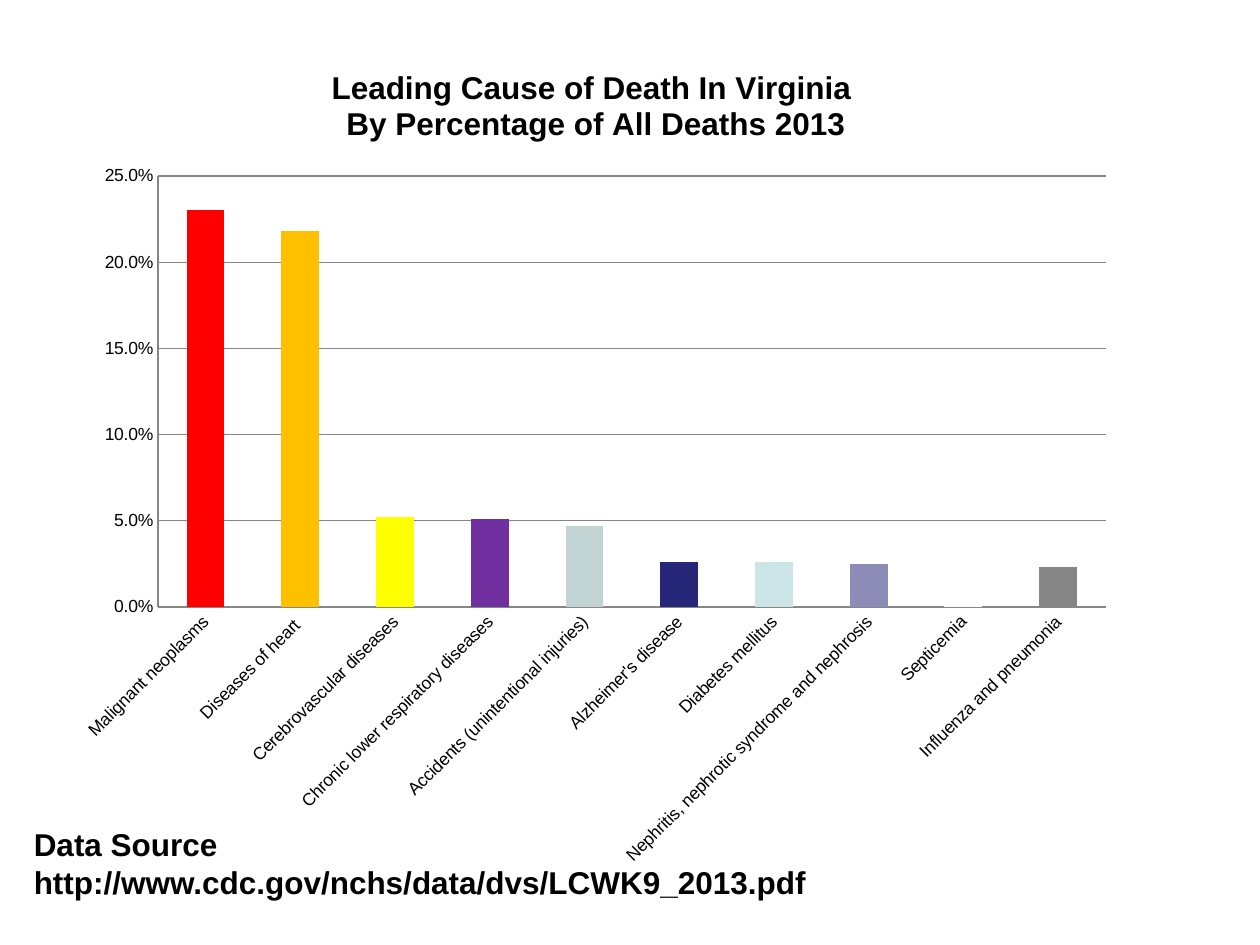
from lxml import etree
from pptx import Presentation, util as u
from pptx.chart.data import CategoryChartData
from pptx.dml.color import RGBColor
from pptx.enum import chart as charts, text
from pptx.oxml.ns import qn

WIDTH, HEIGHT = u.Inches(10), u.Inches(7.5)
FONT = "Arial"
COLOURS = {
    "text": "000000", "line": "868686",
    "red": "FF0000", "orange": "FFC000", "yellow": "FFFF00",
    "purple": "7030A0", "mist": "C2D3D3", "navy": "27277A",
    "ice": "CCE6E7", "lavender": "8C8CB7", "white": "FFFFFF",
    "grey": "868686",
}
TITLE = ["Leading Cause of Death In Virginia ", "By Percentage of All Deaths 2013"]
CAUSES = [
    ("Malignant neoplasms", 0.23, "red"),
    ("Diseases of heart ", 0.218, "orange"),
    ("Cerebrovascular diseases", 0.052, "yellow"),
    ("Chronic lower respiratory diseases", 0.051, "purple"),
    ("Accidents (unintentional injuries)", 0.047, "mist"),
    ("Alzheimer's disease", 0.026, "navy"),
    ("Diabetes mellitus", 0.026, "ice"),
    ("Nephritis, nephrotic syndrome and nephrosis", 0.025, "lavender"),
    ("Septicemia", 0.024, "white"),
    ("Influenza and pneumonia", 0.023, "grey"),
]
SOURCE = "Data Source http://www.cdc.gov/nchs/data/dvs/LCWK9_2013.pdf"


def colour(name):
    return RGBColor.from_string(COLOURS[name])


def style_font(font, size, bold=False):
    font.name, font.size, font.bold = FONT, u.Pt(size), bold
    font.color.rgb = colour("text")


def share_box(left, top, width, height):
    """Turn percentages of the slide into lengths."""
    return [round(share * side / 100) for share, side in
            zip((left, top, width, height), (WIDTH, HEIGHT) * 2)]


def place_by_hand(element, before, modes, **shares):
    """Give a chart part a manual layout in percentages of the chart."""
    for old in element.findall(qn("c:layout")):
        element.remove(old)
    layout = etree.Element(qn("c:layout"))
    manual = etree.SubElement(layout, qn("c:manualLayout"))
    settings = modes | {tag: share / 100 for tag, share in shares.items()}
    for tag, value in settings.items():
        etree.SubElement(manual, qn(f"c:{tag}")).set("val", str(value))
    element.find(qn(f"c:{before}")).addprevious(layout)


def add_title(chart):
    frame = chart.chart_title.text_frame
    for index, line in enumerate(TITLE):
        para = frame.add_paragraph() if index else frame.paragraphs[0]
        para.alignment = text.PP_ALIGN.CENTER
        span = para.add_run()
        span.text = line
        style_font(span.font, 18, True)
    chart.chart_title.include_in_layout = False


def style_axes(chart):
    for axis in (chart.category_axis, chart.value_axis):
        axis.major_tick_mark = axis.minor_tick_mark = charts.XL_TICK_MARK.NONE
        axis.format.line.color.rgb = colour("line")
        axis.format.line.width = u.Pt(0.75)
        style_font(axis.tick_labels.font, 10)
    labels = chart.category_axis._element.find(qn("c:txPr"))
    labels.find(qn("a:bodyPr")).set("rot", str(-45 * 60000))
    values = chart.value_axis
    values.minimum_scale, values.maximum_scale, values.major_unit = 0, 0.25, 0.05
    values.tick_labels.number_format = "0.0%"
    values.tick_labels.number_format_is_linked = False
    values.has_major_gridlines = True
    values.major_gridlines.format.line.color.rgb = colour("line")
    values.major_gridlines.format.line.width = u.Pt(0.75)


def add_cause_chart(page, box):
    data = CategoryChartData(number_format="0.0%")
    data.categories = [cause for cause, _, _ in CAUSES]
    data.add_series("Series 1", [share for _, share, _ in CAUSES])
    chart = page.shapes.add_chart(
        charts.XL_CHART_TYPE.COLUMN_CLUSTERED, *box, data).chart
    style_font(chart.font, 10)
    chart.has_legend = False
    add_title(chart)
    style_axes(chart)

    plot = chart.plots[0]
    plot.gap_width = 150
    plot.vary_by_categories = False
    series = plot.series[0]
    series.invert_if_negative = False
    for index, (_, _, name) in enumerate(CAUSES):
        fill = series.points[index].format.fill
        fill.solid()
        fill.fore_color.rgb = colour(name)

    edges = {"xMode": "edge", "yMode": "edge"}
    area = chart._chartSpace.chart.plotArea
    place_by_hand(area, "barChart", {"layoutTarget": "inner"} | edges,
                  x=8.93, y=16, w=89, h=51.3)
    place_by_hand(chart.chart_title._element, "overlay", edges,
                  x=24.87, y=2.75)


def add_source_note(page, box):
    frame = page.shapes.add_textbox(*box).text_frame
    frame.word_wrap = True
    frame.auto_size = text.MSO_AUTO_SIZE.SHAPE_TO_FIT_TEXT
    span = frame.paragraphs[0].add_run()
    span.text = SOURCE
    style_font(span.font, 18, True)


def main():
    deck = Presentation()
    deck.slide_width, deck.slide_height = WIDTH, HEIGHT
    page = deck.slides.add_slide(deck.slide_layouts[6])
    add_cause_chart(page, share_box(5, 4.4, 84.5, 88.93))
    add_source_note(page, share_box(1.7, 86.67, 78.3, 9.47))
    deck.save("out.pptx")


if __name__ == "__main__":
    main()
